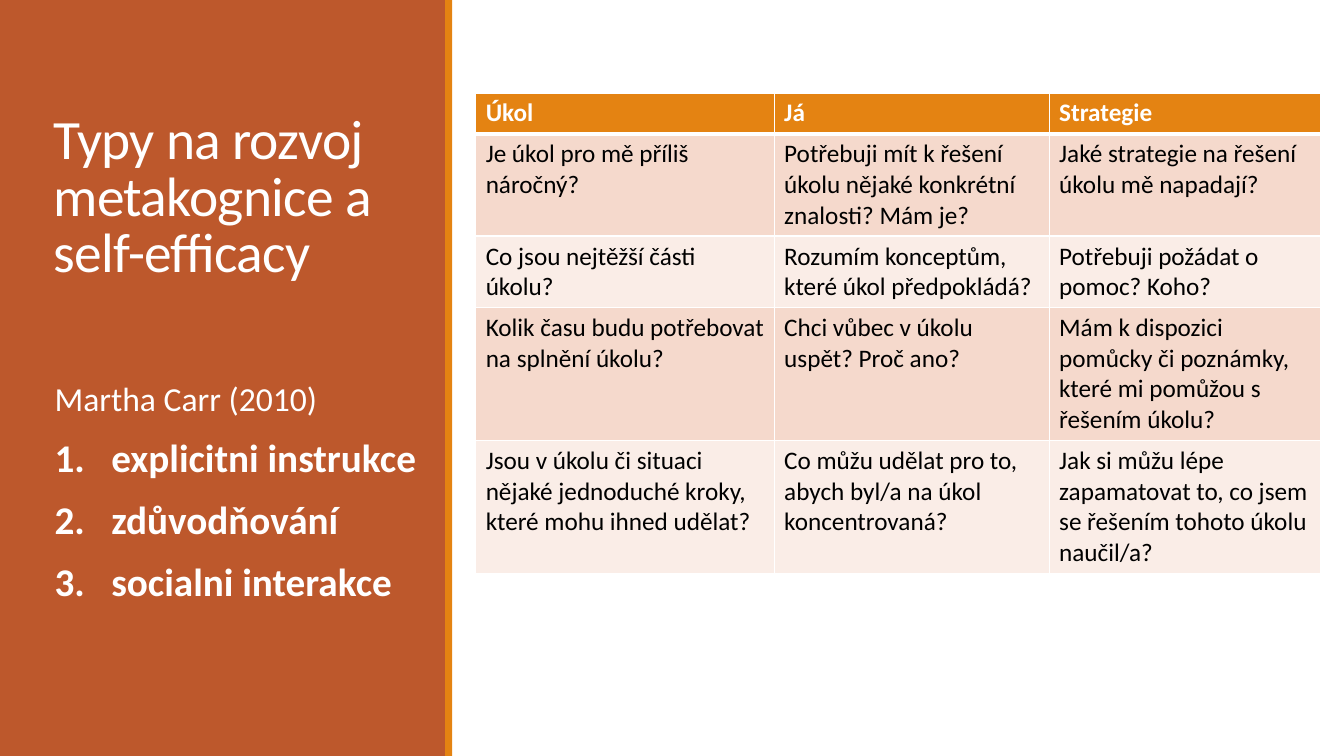
"""Builds a slide on metacognition and self-efficacy with a table of questions."""
from lxml.etree import SubElement
from pptx import Presentation
from pptx.dml.color import RGBColor
from pptx.enum.shapes import MSO_SHAPE
from pptx.enum.text import MSO_ANCHOR, MSO_AUTO_SIZE, PP_ALIGN
from pptx.oxml.ns import qn
from pptx.util import Pt

FONT = "Calibri"
COLORS = {
    "panel": "BD582C",
    "accent": "E48312",
    "white": "FFFFFF",
    "black": "000000",
    "band_dark": "F5D9CC",
    "band_light": "FAEDE7",
}
TITLE = "Typy na rozvoj metakognice a self-efficacy"
SOURCE = "Martha Carr (2010)"
METHODS = ["explicitni instrukce", "zdůvodňování", "socialni interakce"]
QUESTIONS = [
    ["Úkol", "Já", "Strategie"],
    ["Je úkol pro mě příliš náročný?",
     "Potřebuji mít k řešení úkolu nějaké konkrétní znalosti? Mám je?",
     "Jaké strategie na řešení úkolu mě napadají?"],
    ["Co jsou nejtěžší části úkolu?",
     "Rozumím konceptům, které úkol předpokládá?",
     "Potřebuji požádat o pomoc? Koho?"],
    ["Kolik času budu potřebovat na splnění úkolu?",
     "Chci vůbec v úkolu uspět? Proč ano?",
     "Mám k dispozici pomůcky či poznámky, které mi pomůžou s řešením úkolu?"],
    ["Jsou v úkolu či situaci nějaké jednoduché kroky, které mohu ihned udělat?",
     "Co můžu udělat pro to, abych byl/a na úkol koncentrovaná?",
     "Jak si můžu lépe zapamatovat to, co jsem se řešením tohoto úkolu naučil/a?"],
]
COLUMN_WIDTHS = [213.2, 196.4, 193.7]
ROW_HEIGHTS = [29.2, 73, 51, 95, 95]


def rgb(name):
    return RGBColor.from_string(COLORS[name])


def style_runs(paragraph, size, color, bold=False):
    for run in paragraph.runs:
        run.font.name = FONT
        run.font.size = Pt(size)
        run.font.bold = bold
        run.font.color.rgb = rgb(color)


def add_bar(slide, left, width, color):
    bar = slide.shapes.add_shape(MSO_SHAPE.RECTANGLE, Pt(left), 0, Pt(width), Pt(540))
    bar.shadow.inherit = False
    bar.fill.solid()
    bar.fill.fore_color.rgb = rgb(color)
    bar.line.fill.background()


def format_title(slide):
    title = slide.shapes.title
    title.left, title.top, title.width, title.height = Pt(31), Pt(41), Pt(250.6), Pt(165.6)
    frame = title.text_frame
    frame.text = TITLE
    frame.word_wrap = True
    frame.auto_size = MSO_AUTO_SIZE.NONE
    frame.vertical_anchor = MSO_ANCHOR.BOTTOM
    paragraph = frame.paragraphs[0]
    paragraph.alignment = PP_ALIGN.LEFT
    paragraph.line_spacing = 0.85
    style_runs(paragraph, 39.6, "white")
    paragraph.runs[0].font._element.set("spc", "-50")


def number_paragraph(paragraph):
    properties = paragraph._p.get_or_add_pPr()
    properties.set("marL", str(Pt(40.5)))
    properties.set("indent", str(-Pt(40.5)))
    SubElement(properties, qn("a:buFont"), typeface="+mj-lt")
    SubElement(properties, qn("a:buAutoNum"), type="arabicPeriod")


def add_methods(slide):
    box = slide.shapes.add_textbox(Pt(39), Pt(270), Pt(270), Pt(201.6))
    frame = box.text_frame
    frame.word_wrap = True
    frame.margin_left = frame.margin_right = 0
    frame.text = "\n".join([SOURCE, *METHODS])
    for index, paragraph in enumerate(frame.paragraphs):
        paragraph.line_spacing = 0.9
        paragraph.space_before = Pt(12)
        paragraph.space_after = Pt(2)
        if index == 0:
            style_runs(paragraph, 24, "white")
        else:
            style_runs(paragraph, 28, "white", bold=True)
            number_paragraph(paragraph)


def add_borders(cell, widths):
    properties = cell._tc.get_or_add_tcPr()
    for side, width in widths.items():
        line = SubElement(properties, qn(f"a:ln{side}"), w=str(Pt(width)))
        fill = SubElement(line, qn("a:solidFill"))
        SubElement(fill, qn("a:srgbClr"), val=COLORS["white"])


def format_cell(cell, text, row):
    header = row == 0
    add_borders(cell, {"L": 1, "R": 1, "T": 3 if row == 1 else 1, "B": 3 if header else 1})
    band = "band_dark" if row % 2 else "band_light"
    cell.fill.solid()
    cell.fill.fore_color.rgb = rgb("accent" if header else band)
    cell.text_frame.text = text
    style_runs(cell.text_frame.paragraphs[0], 18, "white" if header else "black", header)


def add_questions(slide):
    table = slide.shapes.add_table(
        len(QUESTIONS), len(COLUMN_WIDTHS), Pt(339.8), Pt(66.4),
        Pt(sum(COLUMN_WIDTHS)), Pt(sum(ROW_HEIGHTS))).table
    for column, width in zip(table.columns, COLUMN_WIDTHS):
        column.width = Pt(width)
    for row, (height, texts) in enumerate(zip(ROW_HEIGHTS, QUESTIONS)):
        table.rows[row].height = Pt(height)
        for column, text in enumerate(texts):
            format_cell(table.cell(row, column), text, row)


def main():
    presentation = Presentation()
    presentation.slide_width, presentation.slide_height = Pt(960), Pt(540)
    slide = presentation.slides.add_slide(presentation.slide_layouts.get_by_name("Title Only"))
    slide.background.fill.solid()
    slide.background.fill.fore_color.rgb = rgb("white")
    add_bar(slide, 0, 319, "panel")
    add_bar(slide, 318, 5, "accent")
    title_element = slide.shapes.title._element
    title_element.getparent().append(title_element)
    format_title(slide)
    add_methods(slide)
    add_questions(slide)
    presentation.save("out.pptx")


if __name__ == "__main__":
    main()
